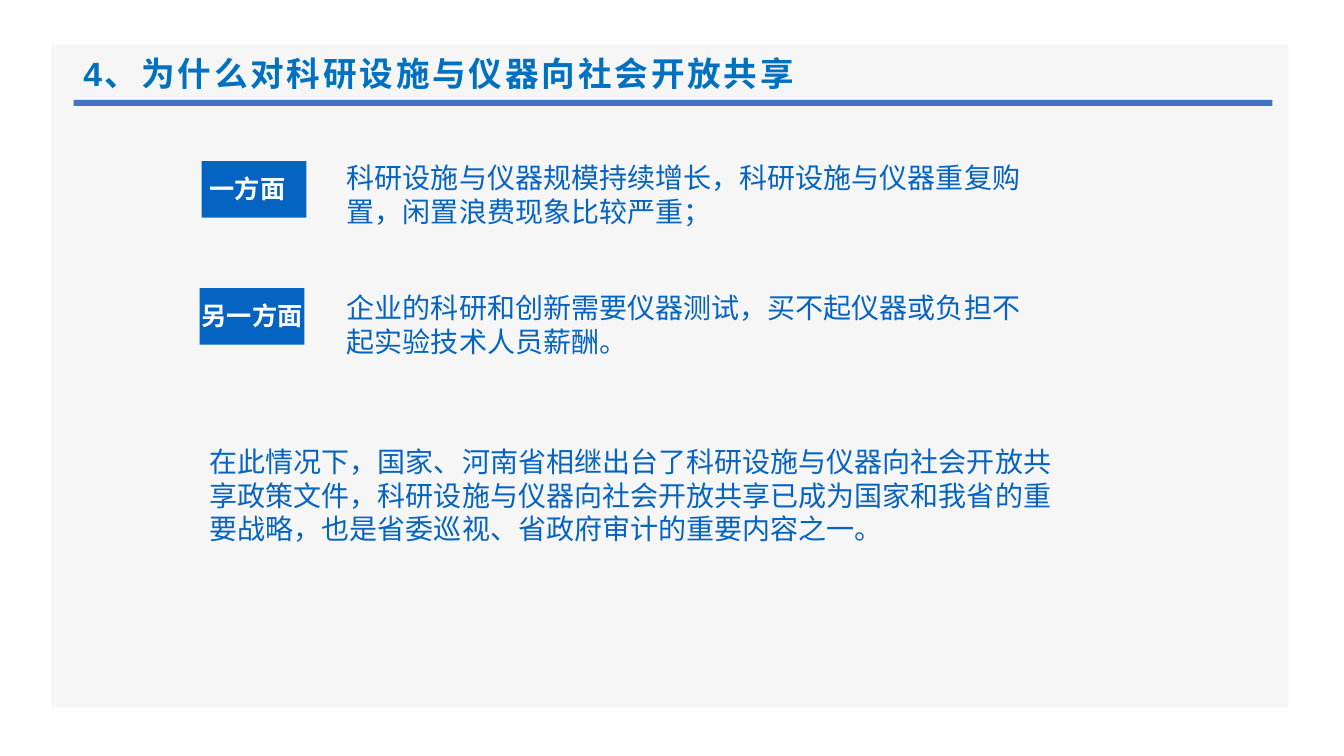
"""Build the slide on why research facilities are shared with society."""
from lxml import etree
from pptx import Presentation
from pptx import util as u
from pptx.dml.color import RGBColor
from pptx.enum import shapes, text
from pptx.oxml import ns

COLOURS = {
    "panel": "F6F6F6",
    "rule": "4472C4",
    "title": "0070C0",
    "blue": "0563C1",
    "white": "FFFFFF",
}
BODY_FONT = "Noto Sans CJK SC"
BODY_LEADING = u.Pt(24)
REASONS = [
    ("一方面", (2, 1.6), (2.08, 1.72, 0.79, 0.3), 1.59,
     "科研设施与仪器规模持续增长，科研设施与仪器重复购置，闲置浪费现象比较严重；"),
    ("另一方面", (1.98, 2.86), (2, 2.98, 1.04, 0.3), 2.88,
     "企业的科研和创新需要仪器测试，买不起仪器或负担不起实验技术人员薪酬。"),
]
CONCLUSION = (
    "在此情况下，国家、河南省相继出台了科研设施与仪器向社会开放共享政策文件，"
    "科研设施与仪器向社会开放共享已成为国家和我省的重要战略，"
    "也是省委巡视、省政府审计的重要内容之一。"
)


def add_block(slide, box, colour):
    """Add a plain filled rectangle."""
    block = slide.shapes.add_shape(
        shapes.MSO_SHAPE.RECTANGLE, *map(u.Inches, box))
    block.shadow.inherit = False
    block.fill.solid()
    block.fill.fore_color.rgb = RGBColor.from_string(COLOURS[colour])
    block.line.fill.background()


def add_words(slide, box, words, size, colour, bold=False, font=BODY_FONT,
              inset=(0, 0), middle=True, leading=None, tracking=None):
    """Add a wrapped text box holding one paragraph."""
    frame = slide.shapes.add_textbox(*map(u.Inches, box)).text_frame
    frame.word_wrap = True
    frame.margin_left = frame.margin_right = u.Inches(inset[0])
    frame.margin_top = frame.margin_bottom = u.Inches(inset[1])
    frame.vertical_anchor = (
        text.MSO_ANCHOR.MIDDLE if middle else text.MSO_ANCHOR.TOP)
    frame.text = words
    paragraph = frame.paragraphs[0]
    if leading:
        paragraph.line_spacing = leading
    style = paragraph.runs[0].font
    style.size = u.Pt(size)
    style.bold = bold
    style.name = font
    style.color.rgb = RGBColor.from_string(COLOURS[colour])
    properties = paragraph.runs[0]._r.get_or_add_rPr()
    properties.set("lang", "zh-CN")
    if tracking:
        properties.set("spc", str(tracking * 100))
    east_asian = etree.SubElement(properties, ns.qn("a:ea"))
    east_asian.set("typeface", font)


def add_reason(slide, label, corner, label_box, top, reason):
    """Add a blue label block with its reason beside it."""
    add_block(slide, (*corner, 1.04, 0.56), "blue")
    add_words(slide, label_box, label, 18, "white", bold=True)
    add_words(slide, (3.44, top, 6.72, 0.67), reason, 20, "blue",
              leading=BODY_LEADING)


def main():
    """Assemble and save the slide."""
    deck = Presentation()
    deck.slide_width = u.Inches(13.33)
    deck.slide_height = u.Inches(7.5)
    slide = deck.slides.add_slide(deck.slide_layouts[6])
    add_block(slide, (0.51, 0.44, 12.27, 6.58), "panel")
    add_block(slide, (0.73, 0.99, 11.89, 0.06), "rule")
    add_words(slide, (0.73, 0.48, 11.87, 0.48),
              "4、为什么对科研设施与仪器向社会开放共享", 24, "title",
              bold=True, font="Arial", inset=(0.1, 0.05), middle=False,
              tracking=2)
    for reason in REASONS:
        add_reason(slide, *reason)
    add_words(slide, (1.98, 4.36, 8.78, 1.11), CONCLUSION, 20, "blue",
              inset=(0.1, 0.05), middle=False, leading=BODY_LEADING)
    deck.save("out.pptx")


if __name__ == "__main__":
    main()
